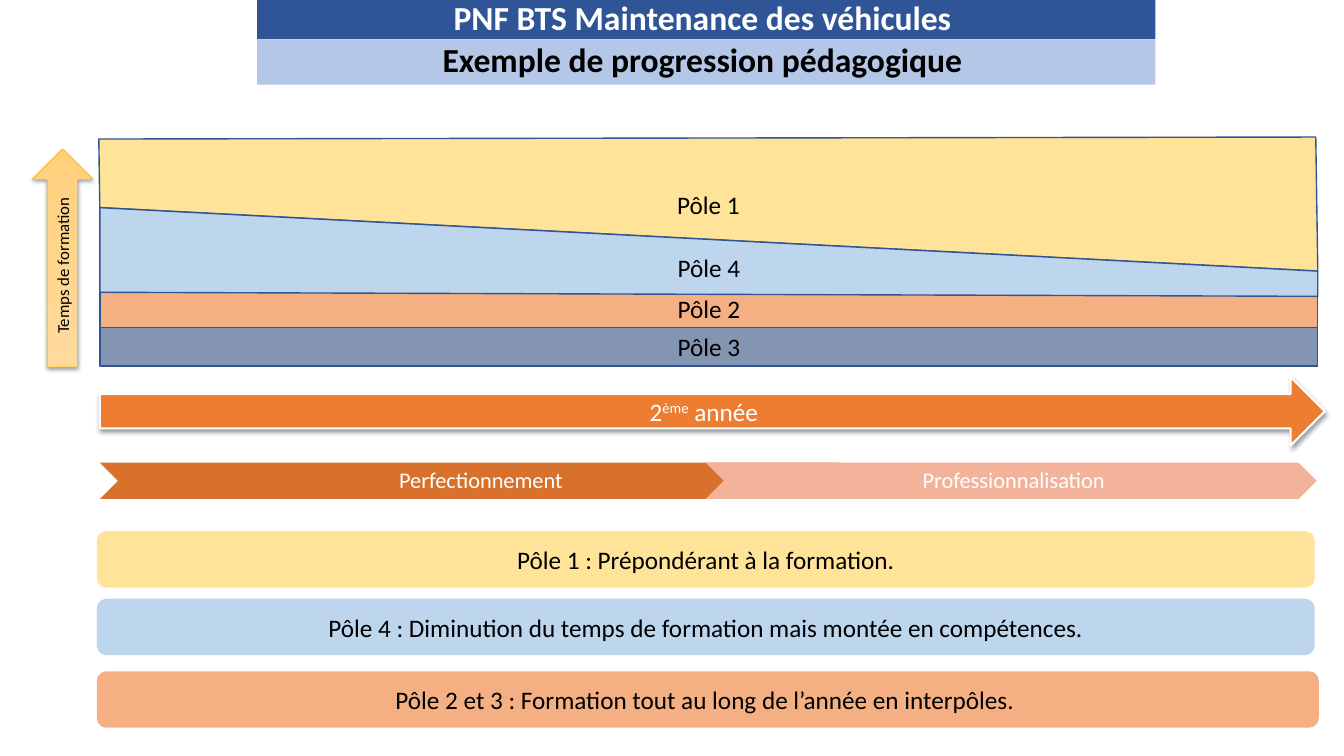
from lxml import etree
from pptx import Presentation
from pptx.dml.color import RGBColor
from pptx.enum.shapes import MSO_SHAPE
from pptx.enum.text import MSO_ANCHOR, PP_ALIGN
from pptx.oxml.ns import qn
from pptx.util import Inches, Pt

RECTANGLE = MSO_SHAPE.RECTANGLE
ROUNDED = MSO_SHAPE.ROUNDED_RECTANGLE
ARROW = MSO_SHAPE.RIGHT_ARROW
CHEVRON = MSO_SHAPE.CHEVRON
MIDDLE = MSO_ANCHOR.MIDDLE
CENTER = PP_ALIGN.CENTER

FONT = "Calibri"
COLORS = {
    "navy": "2F5597", "pale_blue": "B4C7E7", "outline": "325490",
    "yellow": "FFE399", "blue": "BDD6ED", "salmon": "F4B082", "slate": "8395B0",
    "orange": "ED7D31", "dark_orange": "D7712C", "pink": "F3B39B",
    "gold": "FFC000", "gold_start": "FFDA9E", "gold_end": "FFD07C",
    "black": "000000", "white": "FFFFFF",
}


def rgb(name):
    return RGBColor.from_string(COLORS[name])


def style(shape, fill=None, line=None, line_width=1):
    shape.shadow.inherit = False
    if fill:
        shape.fill.solid()
        shape.fill.fore_color.rgb = rgb(fill)
    if line:
        shape.line.color.rgb = rgb(line)
        shape.line.width = Pt(line_width)
    else:
        shape.line.fill.background()


def add_shape(slide, kind, box, **look):
    shape = slide.shapes.add_shape(kind, *(Inches(length) for length in box))
    style(shape, **look)
    return shape


def add_outline(slide, points, **look):
    """Draw a closed polygon through points given in inches."""
    corners = [(Inches(x), Inches(y)) for x, y in points]
    builder = slide.shapes.build_freeform(*corners[0])
    builder.add_line_segments(corners[1:], close=True)
    shape = builder.convert_to_shape()
    style(shape, **look)
    return shape


def add_drop_shadow(shape):
    effects = shape._element.spPr.find(qn("a:effectLst"))
    shadow = etree.SubElement(effects, qn("a:outerShdw"), blurRad=str(Pt(3.1)),
                              dist=str(Pt(1.6)), dir="5400000", rotWithShape="0")
    color = etree.SubElement(shadow, qn("a:srgbClr"), val=COLORS["black"])
    etree.SubElement(color, qn("a:alpha"), val="38000")


def write(shape, *parts, size=18, color="black", bold=False, spacing=None,
          insets=(0.1, 0.05, 0.1, 0.05)):
    """Write centred runs; a part given as a tuple is a superscript."""
    frame = shape.text_frame
    frame.word_wrap = True
    frame.vertical_anchor = MIDDLE
    (frame.margin_left, frame.margin_top,
     frame.margin_right, frame.margin_bottom) = map(Inches, insets)
    paragraph = frame.paragraphs[0]
    paragraph.alignment = CENTER
    if spacing:
        paragraph.line_spacing = spacing
    for part in parts:
        raised = isinstance(part, tuple)
        run = paragraph.add_run()
        run.text = part[0] if raised else part
        run.font.name = FONT
        run.font.size = Pt(size)
        run.font.bold = bold
        run.font.color.rgb = rgb(color)
        if raised:
            run.font._element.set("baseline", "30000")


def add_header(slide, left, top, width, height):
    title_height = 0.4
    title = add_shape(slide, RECTANGLE, (left, top, width, title_height), fill="navy")
    write(title, "PNF BTS Maintenance des véhicules ",
          size=24, color="white", bold=True, spacing=0.9)
    subtitle = add_shape(slide, RECTANGLE,
                         (left, top + title_height, width, height - title_height),
                         fill="pale_blue")
    write(subtitle, "Exemple de progression pédagogique ",
          size=24, bold=True, spacing=0.9)


def add_pole_bands(slide, left, top, width, height):
    band = 0.38
    right, bottom = left + width, top + height
    for level, (label, fill) in enumerate([("Pôle 3", "slate"), ("Pôle 2", "salmon")], 1):
        shape = add_shape(slide, RECTANGLE, (left, bottom - level * band, width, band),
                          fill=fill, line="outline")
        write(shape, label)

    split_left, split_right = (left, top + 0.7), (right, top + 1.33)
    pole_1 = add_outline(
        slide, [split_left, (left - 0.01, top + 0.02), (right - 0.02, top), split_right],
        fill="yellow", line="outline")
    write(pole_1, "Pôle 1")
    pole_4 = add_outline(
        slide, [(left, top + 1.54), split_left, split_right, (right, top + 1.58)],
        fill="blue", line="outline")
    write(pole_4, "Pôle 4", insets=(0.1, 0.35, 0.1, 0.05))


def add_time_arrow(slide, left, top, width, height):
    """Place an upward arrow, drawn sideways and turned, in the given box."""
    center_x, center_y = left + width / 2, top + height / 2
    arrow = add_shape(slide, ARROW,
                      (center_x - height / 2, center_y - width / 2, height, width),
                      line="gold", line_width=0.5)
    arrow.rotation = 270
    arrow.fill.gradient()
    arrow.fill.gradient_angle = 0
    for stop, name in zip(arrow.fill.gradient_stops, ("gold_start", "gold_end")):
        stop.color.rgb = rgb(name)
    add_drop_shadow(arrow)
    write(arrow, "Temps de formation", size=12)


def add_year_arrow(slide, *box):
    arrow = add_shape(slide, ARROW, box, fill="orange", line="white", line_width=1.5)
    add_drop_shadow(arrow)
    write(arrow, "2", ("ème",), " année", color="white")


def add_phases(slide, left, top, width, height):
    first_width, second_start = 7.51, 6.01
    phases = [("Perfectionnement", 0, first_width, "dark_orange"),
              ("Professionnalisation", second_start, width - second_start, "pink")]
    for label, offset, phase_width, fill in phases:
        chevron = add_shape(slide, CHEVRON, (left + offset, top, phase_width, height),
                            fill=fill)
        write(chevron, label, size=16, color="white", spacing=0.9,
              insets=(0.07, 0.02, 0.02, 0.02))


def add_summary(slide, left, top, width, height):
    card_height = 0.56
    last = height - card_height
    cards = [
        ("Pôle 1 : Prépondérant à la formation.", 0, width, "yellow"),
        ("Pôle 4 : Diminution du temps de formation mais montée en compétences.",
         0.67, width, "blue"),
        ("Pôle 2 et 3 : Formation tout au long de l’année en interpôles. ",
         last, width + 0.04, "salmon"),
    ]
    for text, offset, card_width, fill in cards:
        card = add_shape(slide, ROUNDED, (left, top + offset, card_width, card_height),
                         fill=fill)
        write(card, text)


def main():
    presentation = Presentation()
    presentation.slide_width = Inches(13.33)
    presentation.slide_height = Inches(7.5)
    slide = presentation.slides.add_slide(presentation.slide_layouts[6])
    add_header(slide, 2.55, -0.01, 8.91, 0.85)
    add_year_arrow(slide, 0.99, 3.74, 12.15, 0.68)
    add_phases(slide, 0.99, 4.59, 12.07, 0.36)
    add_pole_bands(slide, 0.99, 1.36, 12.08, 2.27)
    add_time_arrow(slide, 0.32, 1.48, 0.6, 2.16)
    add_summary(slide, 0.96, 5.27, 12.08, 1.95)
    presentation.save("out.pptx")


if __name__ == "__main__":
    main()
